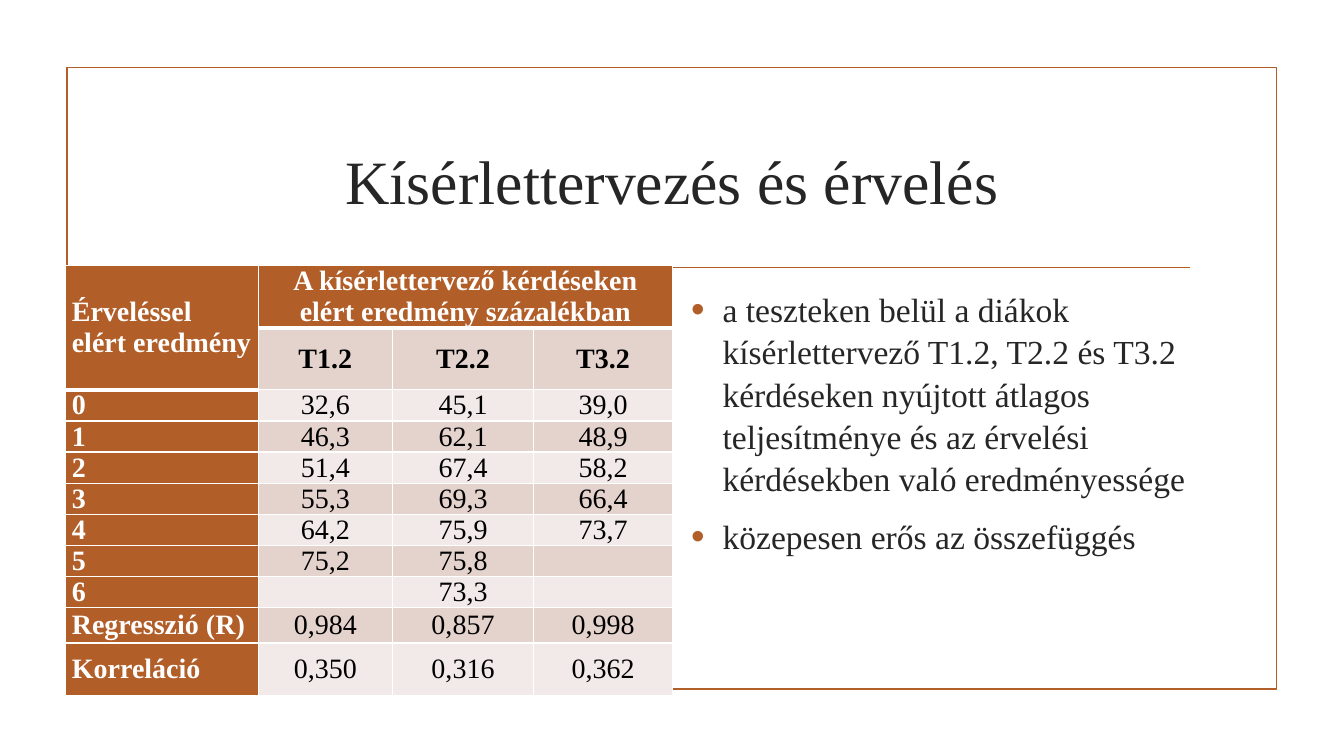
"""Builds the slide on experiment design and reasoning results."""
from lxml import etree
from pptx import Presentation
from pptx import util as u
from pptx.dml import color
from pptx.enum import shapes, text
from pptx.oxml import ns

COLOURS = {"accent": "B15E28", "ink": "262626", "black": "000000",
           "white": "FFFFFF", "dark band": "E4D2CD", "light band": "F2EAE8"}
SCORES = [
    ("0", "32,6", "45,1", "39,0"),
    ("1", "46,3", "62,1", "48,9"),
    ("2", "51,4", "67,4", "58,2"),
    ("3", "55,3", "69,3", "66,4"),
    ("4", "64,2", "75,9", "73,7"),
    ("5", "75,2", "75,8", ""),
    ("6", "", "73,3", ""),
    ("Regresszió (R)", "0,984", "0,857", "0,998"),
    ("Korreláció", "0,350", "0,316", "0,362"),
]
HEADER = [
    ("Érveléssel elért eredmény",
     "A kísérlettervező kérdéseken elért eredmény százalékban", "", ""),
    ("", "T1.2", "T2.2", "T3.2"),
]
FINDINGS = [
    "a teszteken belül a diákok kísérlettervező T1.2, T2.2 és T3.2 kérdéseken "
    "nyújtott átlagos teljesítménye és az érvelési kérdésekben való eredményessége",
    "közepesen erős az összefüggés",
]


def rgb(name):
    return color.RGBColor.from_string(COLOURS[name])


def apply(target, values):
    for name, value in values.items():
        setattr(target, name, value)


def place(left, top, width, height):
    return {"left": u.Cm(left), "top": u.Cm(top),
            "width": u.Cm(width), "height": u.Cm(height)}


class SlideBuilder:
    """Holds the style and the current slide."""

    font = "Times New Roman"
    line_width = u.Pt(1.25)

    def __init__(self, deck):
        self.page = deck.slides.add_slide(deck.slide_layouts[5])

    def add_words(self, para, words, size, colour, bold=False):
        span = para.add_run()
        span.text = words
        apply(span.font, {"name": self.font, "size": u.Pt(size), "bold": bold})
        span.font.color.rgb = rgb(colour)

    def outline(self, line):
        line.color.rgb = rgb("accent")
        line.width = self.line_width

    def title(self, words, area):
        box = self.page.shapes.title
        apply(box, area)
        apply(box.text_frame, {"vertical_anchor": text.MSO_ANCHOR.MIDDLE, "word_wrap": True})
        para = box.text_frame.paragraphs[0]
        para.alignment = text.PP_ALIGN.CENTER
        self.add_words(para, words, 44, "ink")

    def frame(self, area):
        box = self.page.shapes.add_shape(shapes.MSO_SHAPE.RECTANGLE, *area.values())
        box.shadow.inherit = False
        box.fill.background()
        self.outline(box.line)

    def rule(self, left, right, top):
        line = self.page.shapes.add_connector(
            shapes.MSO_CONNECTOR.STRAIGHT, u.Cm(left), u.Cm(top), u.Cm(right), u.Cm(top))
        self.outline(line.line)
        etree.SubElement(line.element.spPr, ns.qn("a:effectLst"))

    def bullets(self, items, area):
        box = self.page.shapes.add_textbox(*area.values())
        box.text_frame.word_wrap = True
        for index, words in enumerate(items):
            para = box.text_frame.add_paragraph() if index else box.text_frame.paragraphs[0]
            apply(para, {"line_spacing": 1.05, "space_after": u.Pt(6),
                         "space_before": u.Pt(4.8 if index else 0)})
            props = para._p.get_or_add_pPr()
            props.set("marL", str(u.Cm(0.79)))
            props.set("indent", str(-u.Cm(0.79)))
            tint = etree.SubElement(props, ns.qn("a:buClr"))
            etree.SubElement(tint, ns.qn("a:srgbClr"), val=COLOURS["accent"])
            etree.SubElement(props, ns.qn("a:buSzPct"), val="115000")
            etree.SubElement(props, ns.qn("a:buFont"), typeface="Arial")
            etree.SubElement(props, ns.qn("a:buChar"), char="•")
            self.add_words(para, words, 24, "ink")

    def borders(self, cell, widths):
        for side, width in widths.items():
            line = etree.SubElement(cell._tc.get_or_add_tcPr(), ns.qn(f"a:ln{side}"),
                                    w=str(u.Pt(width)))
            fill = etree.SubElement(line, ns.qn("a:solidFill"))
            etree.SubElement(fill, ns.qn("a:srgbClr"), val=COLOURS["white"])

    def table(self, rows, widths, heights, left, top):
        area = place(left, top, sum(widths), sum(heights))
        grid = self.page.shapes.add_table(len(rows), len(widths), *area.values()).table
        apply(grid, {"first_row": False, "horz_banding": False})
        for column, width in zip(grid.columns, widths):
            column.width = u.Cm(width)
        for row, height in zip(grid.rows, heights):
            row.height = u.Cm(height)
        for r, row in enumerate(rows):
            for c, words in enumerate(row):
                self.cell(grid.cell(r, c), words, r, c)
        grid.cell(0, 0).merge(grid.cell(1, 0))
        grid.cell(0, 1).merge(grid.cell(0, 3))

    def cell(self, cell, words, r, c):
        heading = r == 0 or c == 0
        thick_top = (r == 1 and c > 0) or (r == 2 and c == 0)
        thick_bottom = r == 0 or (r == 1 and c == 0)
        self.borders(cell, {"L": 1, "R": 1, "T": 3 if thick_top else 1,
                            "B": 3 if thick_bottom else 1})
        cell.fill.solid()
        band = "dark band" if r % 2 else "light band"
        cell.fill.fore_color.rgb = rgb("accent" if heading else band)
        apply(cell, {"margin_left": u.Cm(0.15), "margin_right": u.Cm(0.15),
                     "margin_top": 0, "margin_bottom": 0,
                     "vertical_anchor": text.MSO_ANCHOR.MIDDLE})
        para = cell.text_frame.paragraphs[0]
        para.alignment = text.PP_ALIGN.CENTER if c else text.PP_ALIGN.LEFT
        if words:
            self.add_words(para, words, 20, "white" if heading else "black", heading or r == 1)


def main():
    deck = Presentation()
    apply(deck, {"slide_width": u.Cm(33.87), "slide_height": u.Cm(19.05)})
    slide = SlideBuilder(deck)
    slide.frame(place(1.69, 1.7, 30.48, 15.67))
    slide.rule(3.89, 30, 6.74)
    slide.title("Kísérlettervezés és érvelés", place(3.61, 2.72, 26.67, 3.63))
    slide.table(HEADER + SCORES, [4.85, 3.38, 3.56, 3.5],
                [1.56] * 2 + [0.78] * 7 + [0.89, 1.32], 1.66, 6.69)
    slide.bullets(FINDINGS, place(17.17, 7.11, 13.11, 9.19))
    deck.save("out.pptx")


if __name__ == "__main__":
    main()
